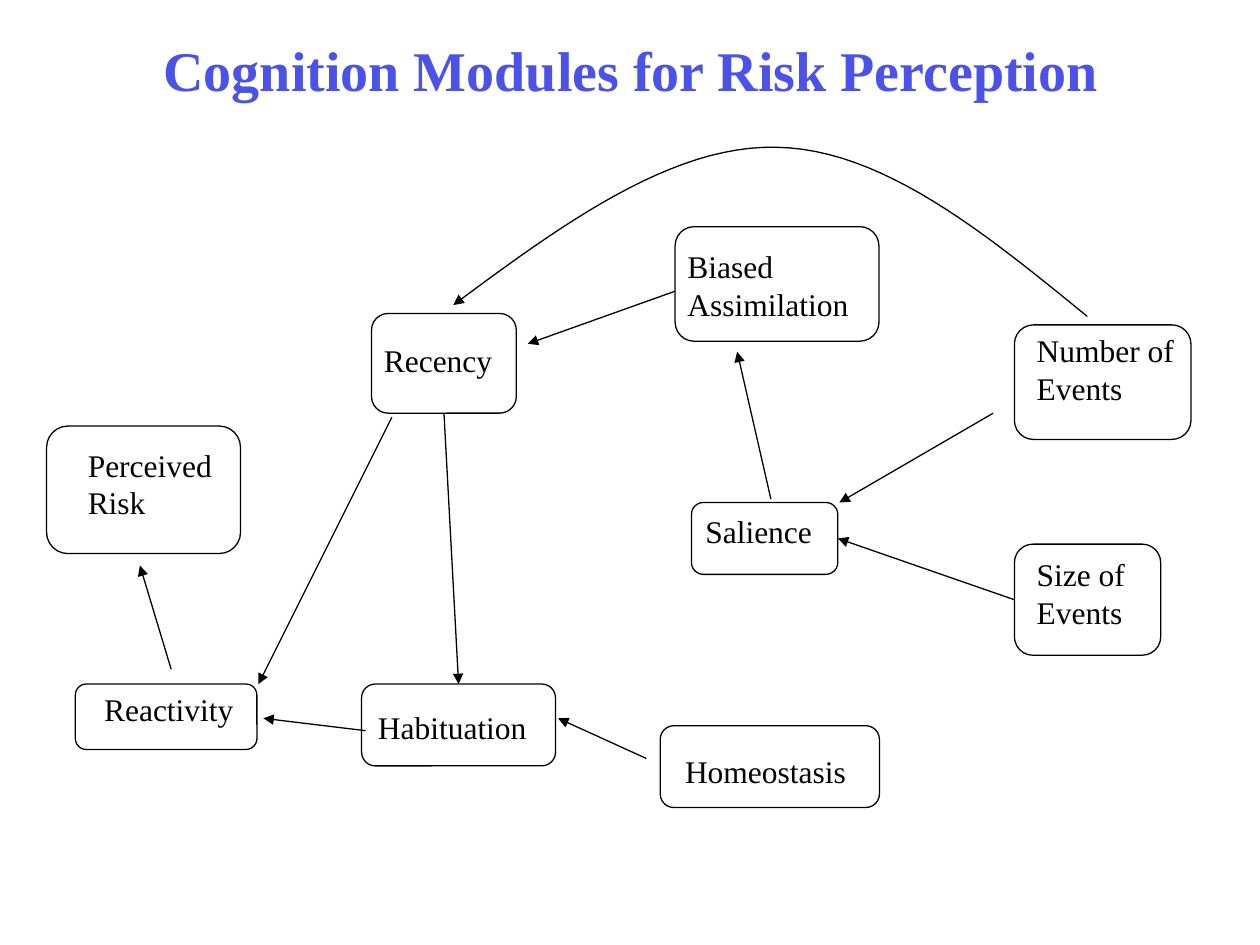
"""Build the slide of cognition modules for risk perception."""
from typing import NamedTuple, Optional

from lxml import etree
from pptx import Presentation
from pptx.dml.color import RGBColor
from pptx.enum.shapes import MSO_CONNECTOR, MSO_SHAPE
from pptx.enum.text import MSO_ANCHOR, PP_ALIGN
from pptx.oxml.ns import qn
from pptx.util import Cm, Pt

BLACK = RGBColor(0x00, 0x00, 0x00)
BLUE = RGBColor(0x4A, 0x52, 0xE7)
FONT = "Times New Roman"
LINE_WIDTH = Pt(0.75)
LINE_HEIGHT = 0.87
TEXT_PADDING = 0.27
CURVE_STEPS = 24
ROUNDED = MSO_SHAPE.ROUNDED_RECTANGLE
STRAIGHT = MSO_CONNECTOR.STRAIGHT
LEFT, CENTER = PP_ALIGN.LEFT, PP_ALIGN.CENTER
TOP, MIDDLE = MSO_ANCHOR.TOP, MSO_ANCHOR.MIDDLE
TOP_SIDE, LEFT_SIDE, BOTTOM_SIDE, RIGHT_SIDE = range(4)

Point = tuple[float, float]


class Module(NamedTuple):
    label: str
    left: float
    top: float
    width: float
    height: float
    text_left: float
    text_top: float
    text_width: float
    lines: int = 1


class Joint(NamedTuple):
    module: str
    side: int


class Arrow(NamedTuple):
    start: Point
    end: Point
    begin_joint: Optional[Joint] = None
    end_joint: Optional[Joint] = None


MODULES = [
    Module("Number of Events", 20.45, 6.55, 3.56, 2.31, 20.65, 6.55, 3.35, 2),
    Module("Size of Events", 20.45, 10.97, 2.95, 2.24, 20.65, 11.07, 3.35, 2),
    Module("Salience", 13.94, 10.13, 2.95, 1.45, 13.97, 10.19, 3.35),
    Module("Biased Assimilation", 13.61, 4.57, 4.11, 2.31, 13.61, 4.85, 4.14, 2),
    Module("Homeostasis", 13.31, 14.63, 4.42, 1.65, 13.56, 15.04, 4.17),
    Module("Habituation", 7.29, 13.79, 3.91, 1.65, 7.37, 14.15, 4.17),
    Module("Recency", 7.49, 6.32, 2.92, 2.01, 7.49, 6.76, 3.35),
    Module("Reactivity", 1.52, 13.79, 3.66, 1.32, 1.85, 13.79, 3.81),
    Module("Perceived Risk", 0.94, 8.59, 3.91, 2.57, 1.52, 8.86, 3.35, 2),
]

ARROWS = [
    Arrow((20.02, 8.33), (16.92, 10.13)),
    Arrow((20.45, 12.07), (16.92, 10.87),
          Joint("Size of Events", LEFT_SIDE), Joint("Salience", RIGHT_SIDE)),
    Arrow((15.54, 10.06), (14.86, 7.09)),
    Arrow((13.61, 5.87), (10.64, 6.93)),
    Arrow((13.03, 15.29), (11.25, 14.48)),
    Arrow((8.97, 8.33), (9.25, 13.79),
          Joint("Recency", BOTTOM_SIDE), Joint("Habituation", TOP_SIDE)),
    Arrow((7.9, 8.41), (5.21, 13.79)),
    Arrow((7.37, 14.73), (5.31, 14.48)),
    Arrow((3.45, 13.49), (2.82, 11.4)),
]

EVENTS_TO_RECENCY = [
    ((21.92, 6.38), (19.86, 4.7), (17.78, 3.0), (15.65, 2.97)),
    ((15.65, 2.97), (13.54, 2.92), (11.33, 4.52), (9.14, 6.15)),
]


def write_text(frame, text: str, *, size: float = 18, color: RGBColor = BLACK,
               bold: bool = False, align=LEFT, anchor=TOP) -> None:
    frame.word_wrap = True
    frame.vertical_anchor = anchor
    paragraph = frame.paragraphs[0]
    paragraph.alignment = align
    run = paragraph.add_run()
    run.text = text
    run.font.name = FONT
    run.font.size = Pt(size)
    run.font.bold = bold
    run.font.color.rgb = color


def draw_outline(shape) -> None:
    shape.line.color.rgb = BLACK
    shape.line.width = LINE_WIDTH


def add_arrowhead(shape) -> None:
    line = shape.element.spPr.find(qn("a:ln"))
    etree.SubElement(line, qn("a:tailEnd"), type="triangle")


def add_module(slide, module: Module):
    shape = slide.shapes.add_shape(ROUNDED, Cm(module.left), Cm(module.top),
                                   Cm(module.width), Cm(module.height))
    shape.shadow.inherit = False
    shape.fill.background()
    draw_outline(shape)
    text_box = slide.shapes.add_textbox(
        Cm(module.text_left), Cm(module.text_top), Cm(module.text_width),
        Cm(TEXT_PADDING + LINE_HEIGHT * module.lines))
    write_text(text_box.text_frame, module.label)
    return shape


def add_arrow(slide, arrow: Arrow, shapes: dict) -> None:
    connector = slide.shapes.add_connector(
        STRAIGHT, *map(Cm, arrow.start), *map(Cm, arrow.end))
    if arrow.begin_joint:
        connector.begin_connect(shapes[arrow.begin_joint.module], arrow.begin_joint.side)
    if arrow.end_joint:
        connector.end_connect(shapes[arrow.end_joint.module], arrow.end_joint.side)
    draw_outline(connector)
    add_arrowhead(connector)
    etree.SubElement(connector.element.spPr, qn("a:effectLst"))


def curve_point(controls: tuple, t: float) -> Point:
    weights = ((1 - t) ** 3, 3 * t * (1 - t) ** 2, 3 * t ** 2 * (1 - t), t ** 3)
    x, y = (sum(weight * value for weight, value in zip(weights, axis))
            for axis in zip(*controls))
    return Cm(x), Cm(y)


def add_curved_arrow(slide, segments: list) -> None:
    points = [curve_point(controls, step / CURVE_STEPS)
              for controls in segments for step in range(1, CURVE_STEPS + 1)]
    start = curve_point(segments[0], 0)
    builder = slide.shapes.build_freeform(*start)
    builder.add_line_segments(points, close=False)
    shape = builder.convert_to_shape()
    shape.shadow.inherit = False
    shape.fill.background()
    draw_outline(shape)
    add_arrowhead(shape)


def main() -> None:
    presentation = Presentation()
    presentation.slide_width, presentation.slide_height = Cm(25.4), Cm(19.05)
    slide = presentation.slides.add_slide(presentation.slide_layouts[5])
    title = slide.shapes.title
    title.left, title.top, title.width, title.height = map(Cm, (1.93, -0.2, 21.59, 3.18))
    write_text(title.text_frame, "Cognition Modules for Risk Perception",
               size=32, color=BLUE, bold=True, align=CENTER, anchor=MIDDLE)
    shapes = {module.label: add_module(slide, module) for module in MODULES}
    for arrow in ARROWS:
        add_arrow(slide, arrow, shapes)
    add_curved_arrow(slide, EVENTS_TO_RECENCY)
    presentation.save("out.pptx")


if __name__ == "__main__":
    main()
